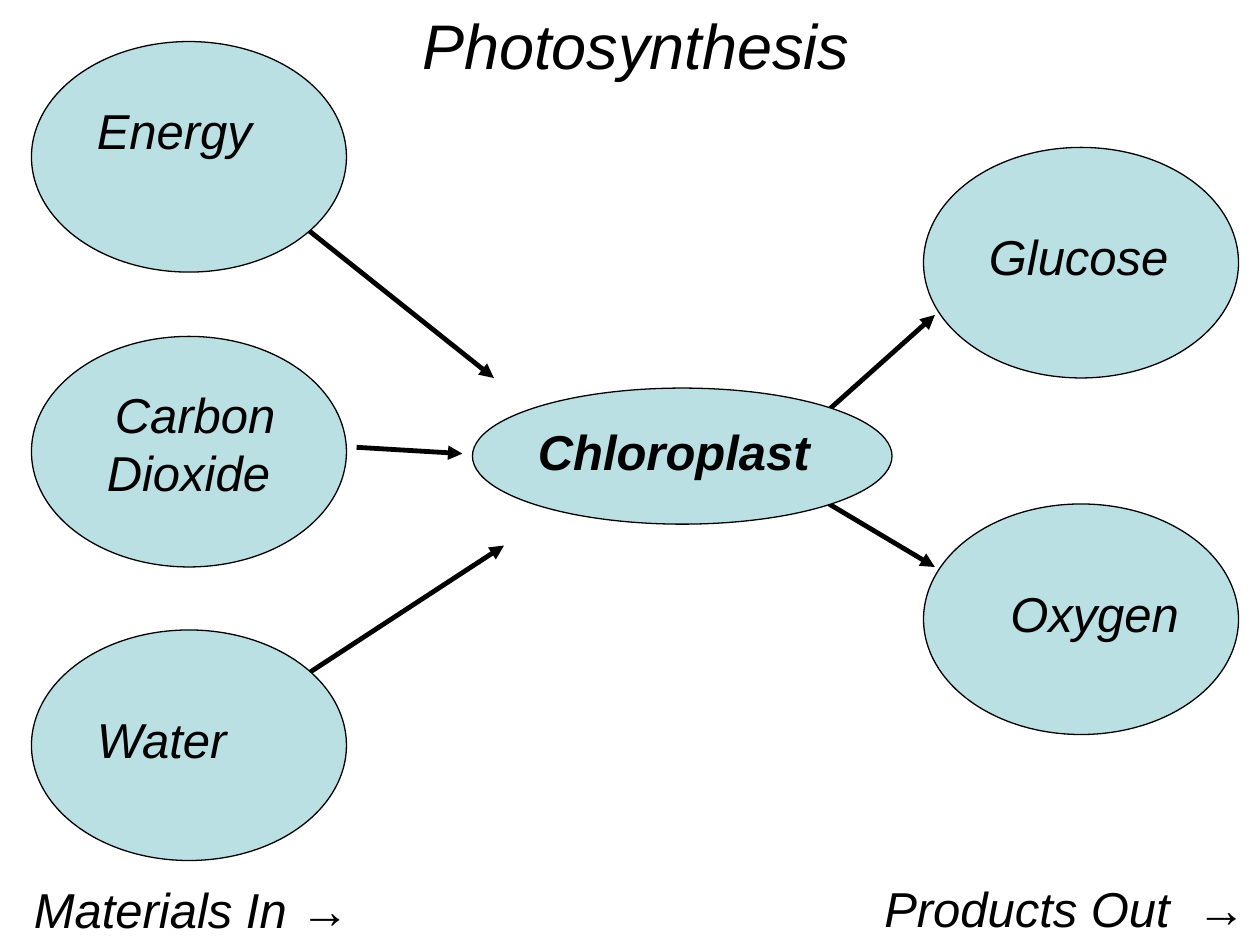
"""Build the photosynthesis diagram slide."""
from lxml.etree import SubElement
from pptx import Presentation
from pptx.dml.color import RGBColor
from pptx.enum.shapes import MSO_CONNECTOR, MSO_SHAPE
from pptx.enum.text import MSO_ANCHOR, MSO_AUTO_SIZE, PP_ALIGN
from pptx.oxml.ns import qn
from pptx.util import Inches, Pt

BLACK = RGBColor(0x00, 0x00, 0x00)
AQUA = RGBColor(0xBB, 0xE0, 0xE3)

TITLE = ("Photosynthesis", (3.25, 0, 3.62, 0.71))
LEFT_X, RIGHT_X = 0.25, 7.33
ROUND, FLAT = (2.5, 1.83), (3.33, 1.08)

# left, top, size
OVALS = [
    (LEFT_X, 0.33, ROUND),
    (LEFT_X, 2.67, ROUND),
    (LEFT_X, 5, ROUND),
    (3.75, 3.08, FLAT),
    (RIGHT_X, 1.17, ROUND),
    (RIGHT_X, 4, ROUND),
]
ARROWS = [
    ((2.25, 1.67), (3.92, 3)),
    ((2.83, 3.55), (3.67, 3.6)),
    ((2.33, 5.42), (4, 4.33)),
    ((6.58, 3.25), (7.42, 2.5)),
    ((6.58, 4), (7.42, 4.5)),
]
LABELS = [
    ("Energy", (0.67, 0.75, 1.67, 0.57), {}),
    (" Carbon Dioxide", (0.58, 3, 1.83, 1.04), {"align": PP_ALIGN.CENTER}),
    ("Water", (0.67, 5.58, 1.67, 0.57), {}),
    ("Chloroplast", (4.17, 3.3, 2.58, 0.57), {"bold": True}),
    ("Glucose", (7.75, 1.75, 1.67, 0.57), {}),
    ("Oxygen", (7.92, 4.58, 1.67, 0.57), {}),
    ("Materials In →", (0.17, 6.93, 3.75, 0.57), {}),
    ("Products Out  →", (6.92, 6.92, 3.17, 0.57), {}),
]


def write(sp, text, box, size=28, align=PP_ALIGN.LEFT, bold=False, wrap=True):
    sp.left, sp.top, sp.width, sp.height = map(Inches, box)
    tf = sp.text_frame
    tf.text = text
    tf.word_wrap = wrap
    tf.auto_size = MSO_AUTO_SIZE.SHAPE_TO_FIT_TEXT
    tf.vertical_anchor = MSO_ANCHOR.TOP
    p = tf.paragraphs[0]
    p.alignment = align
    p.font.name, p.font.size = "Arial", Pt(size)
    p.font.italic, p.font.bold = True, bold
    p.font.color.rgb = BLACK


def add_oval(s, left, top, size):
    sp = s.shapes.add_shape(MSO_SHAPE.OVAL, *map(Inches, (left, top, *size)))
    sp.shadow.inherit = False
    sp.fill.solid()
    sp.fill.fore_color.rgb = AQUA
    sp.line.color.rgb = BLACK
    sp.line.width = Pt(0.75)


def add_arrow(s, start, end):
    cx = s.shapes.add_connector(MSO_CONNECTOR.STRAIGHT, *map(Inches, start + end))
    cx.line.color.rgb = BLACK
    cx.line.width = Pt(2.75)
    SubElement(cx.line._get_or_add_ln(), qn("a:tailEnd"), type="triangle")
    SubElement(cx._element.spPr, qn("a:effectLst"))


def main():
    prs = Presentation()
    prs.slide_width, prs.slide_height = Inches(10), Inches(7.5)
    s = prs.slides.add_slide(prs.slide_layouts[5])
    write(s.shapes.title, *TITLE, size=36, wrap=False)
    for start, end in ARROWS:
        add_arrow(s, start, end)
    for left, top, size in OVALS:
        add_oval(s, left, top, size)
    for text, box, style in LABELS:
        write(s.shapes.add_textbox(0, 0, 0, 0), text, box, **style)
    prs.save("out.pptx")


if __name__ == "__main__":
    main()
